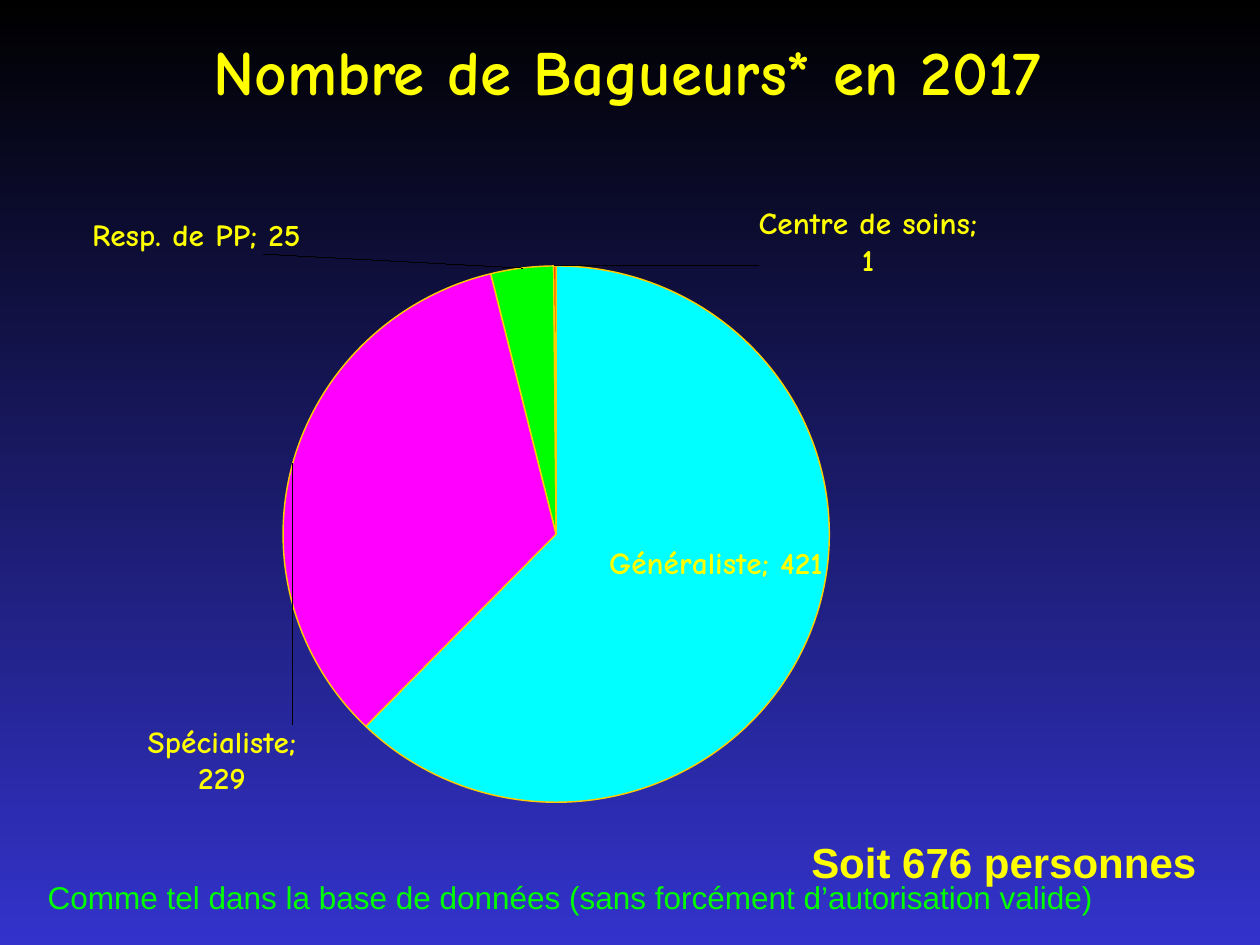
from lxml.etree import SubElement
from pptx import Presentation
from pptx.chart.data import CategoryChartData
from pptx.dml.color import RGBColor
from pptx.enum.chart import XL_CHART_TYPE, XL_LABEL_POSITION
from pptx.enum.text import MSO_ANCHOR, PP_ALIGN
from pptx.oxml import parse_xml
from pptx.oxml.ns import nsdecls, qn
from pptx.util import Inches, Pt

BLACK = RGBColor(0x00, 0x00, 0x00)
BLUE = RGBColor(0x33, 0x33, 0xCC)
YELLOW = RGBColor(0xFF, 0xFF, 0x00)
GREEN = RGBColor(0x00, 0xFF, 0x00)
CYAN = RGBColor(0x00, 0xFF, 0xFF)
MAGENTA = RGBColor(0xFF, 0x00, 0xFF)
RED = RGBColor(0xFF, 0x00, 0x00)
GOLD = RGBColor(0xFF, 0xCC, 0x00)

COMIC = "Comic Neue"
OUTSIDE = XL_LABEL_POSITION.OUTSIDE_END
CENTER = XL_LABEL_POSITION.CENTER

# Category, count, slice colour, label position, label shift as a share of the chart
RINGERS = [
    ("Généraliste", 421, CYAN, CENTER, (0.03, -0.03)),
    ("Spécialiste", 229, MAGENTA, OUTSIDE, (0.01, 0.5)),
    ("Resp. de PP", 25, GREEN, OUTSIDE, (-0.23, -0.01)),
    ("Centre de soins", 1, RED, OUTSIDE, (0.28, 0.03)),
]


def set_background(slide):
    fill = slide.background.fill
    fill.gradient()
    fill.gradient_angle = 270
    for stop, color, position in zip(fill.gradient_stops, (BLACK, BLUE), (0, 1)):
        stop.color.rgb = color
        stop.position = position


def format_font(font, size, color, name, bold=False):
    font.size = Pt(size)
    font.color.rgb = color
    font.name = name
    font.bold = bold


def write_text(shape, text, *, size, color, name="Arial", bold=False,
               align=PP_ALIGN.LEFT, wrap=False):
    frame = shape.text_frame
    frame.word_wrap = wrap
    frame.vertical_anchor = MSO_ANCHOR.TOP
    paragraph = frame.paragraphs[0]
    paragraph.alignment = align
    run = paragraph.add_run()
    run.text = text
    format_font(run.font, size, color, name, bold)
    return run


def add_text_shadow(run):
    shadow = parse_xml(
        f'<a:effectLst {nsdecls("a")}><a:outerShdw dist="38100" dir="2700000">'
        '<a:srgbClr val="000000"/></a:outerShdw></a:effectLst>'
    )
    run._r.rPr.find(qn("a:solidFill")).addnext(shadow)


def add_title(slide, text):
    title = slide.shapes.title
    title.left, title.top = Inches(0.73), Inches(0.21)
    title.width, title.height = Inches(8.5), Inches(1.25)
    run = write_text(title, text, size=36, color=YELLOW, name=COMIC, bold=True,
                     align=PP_ALIGN.CENTER, wrap=True)
    add_text_shadow(run)


def add_note(slide, text, left, top, width, height, **text_format):
    box = slide.shapes.add_textbox(Inches(left), Inches(top), Inches(width), Inches(height))
    write_text(box, text, **text_format)


def manual_layout(**settings):
    layout = parse_xml(f'<c:layout {nsdecls("c")}><c:manualLayout/></c:layout>')
    for tag, value in settings.items():
        SubElement(layout[0], qn(f"c:{tag}")).set("val", str(value))
    return layout


def add_separator(labels):
    separator = parse_xml(f'<c:separator {nsdecls("c")}>; </c:separator>')
    labels.find(qn("c:showBubbleSize")).addnext(separator)


def format_slice(point, color, position, shift):
    point.format.fill.solid()
    point.format.fill.fore_color.rgb = color
    point.format.line.color.rgb = GOLD
    point.format.line.width = Pt(0.82)
    label = point.data_label
    format_font(label.font, 17.9, YELLOW, COMIC, True)
    label.position = position
    element = label._dLbl
    element.find(qn("c:idx")).addnext(manual_layout(x=shift[0], y=shift[1]))
    element.find(qn("c:showCatName")).set("val", "1")
    element.find(qn("c:showPercent")).set("val", "0")
    add_separator(element)


def add_ringer_pie(slide):
    data = CategoryChartData()
    data.categories = [ringer[0] for ringer in RINGERS]
    data.add_series("Series 1", [ringer[1] for ringer in RINGERS])
    chart = slide.shapes.add_chart(
        XL_CHART_TYPE.PIE, Inches(0.73), Inches(1.48), Inches(8.88), Inches(5.42), data
    ).chart
    chart.has_legend = False
    chart.has_title = False
    format_font(chart.font, 20.2, BLACK, COMIC, True)

    plot = chart.plots[0]
    plot.vary_by_categories = True
    plot_area = chart._chartSpace.chart.plotArea
    for old_layout in plot_area.findall(qn("c:layout")):
        plot_area.remove(old_layout)
    plot_area.insert(0, manual_layout(
        layoutTarget="inner", xMode="edge", yMode="edge", x=0.02, y=0.1, w=0.79, h=0.8))

    series = plot.series[0]
    labels = series.data_labels
    labels.show_value = True
    labels.show_category_name = True
    labels.show_percentage = False
    format_font(labels.font, 17.9, YELLOW, COMIC, True)
    add_separator(labels._element)
    for index, (_, _, color, position, shift) in enumerate(RINGERS):
        format_slice(series.points[index], color, position, shift)


def main():
    presentation = Presentation()
    presentation.slide_width, presentation.slide_height = Inches(10), Inches(7.5)
    slide = presentation.slides.add_slide(presentation.slide_layouts[5])
    set_background(slide)
    add_title(slide, "Nombre de Bagueurs* en 2017")
    add_ringer_pie(slide)
    add_note(slide, "Soit 676 personnes", 6.34, 6.59, 3.29, 0.5,
             size=24, color=YELLOW, bold=True)
    add_note(slide, "Comme tel dans la base de données (sans forcément d’autorisation valide)",
             0.28, 6.92, 8.57, 0.4, size=18, color=GREEN)
    presentation.save("out.pptx")


if __name__ == "__main__":
    main()
